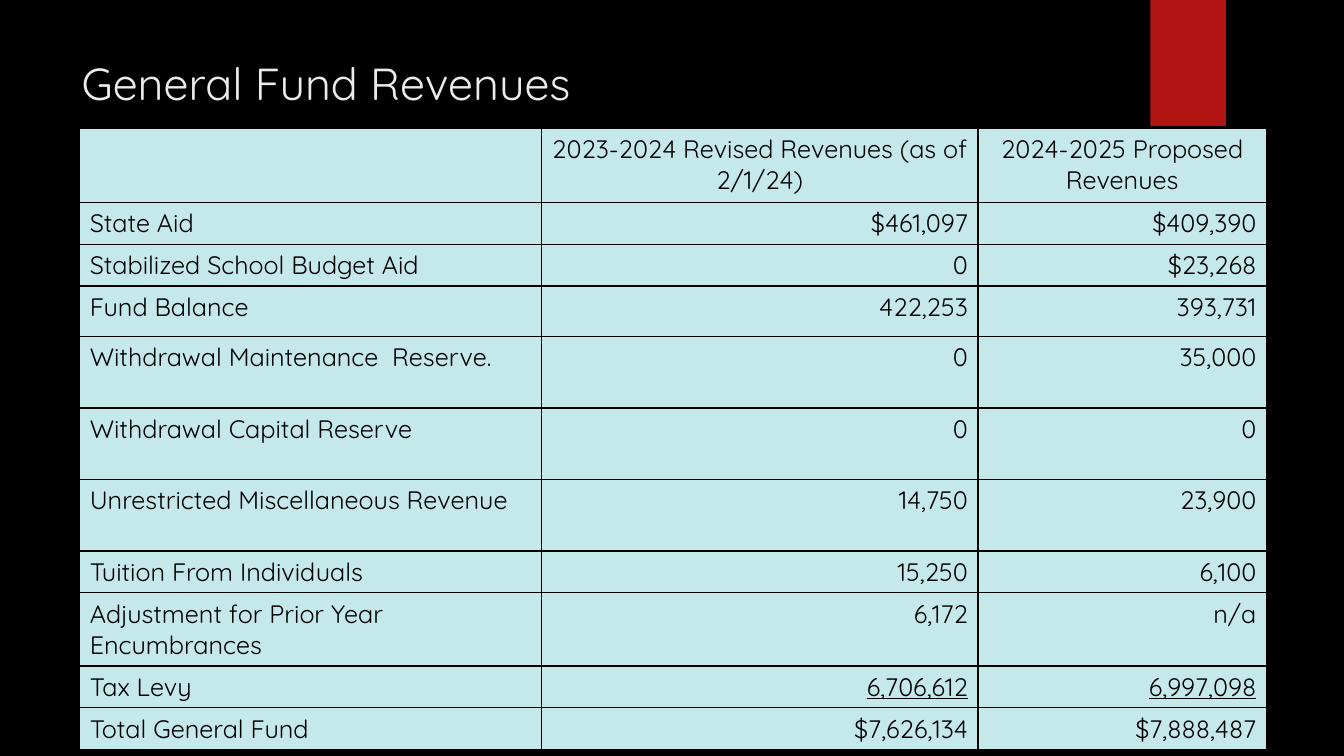
from lxml.etree import SubElement
from pptx import Presentation
from pptx.dml.color import RGBColor
from pptx.enum.shapes import MSO_SHAPE
from pptx.enum.text import MSO_ANCHOR, PP_ALIGN
from pptx.oxml.ns import qn
from pptx.util import Inches, Pt

FONT = "Quicksand"
BLACK, WHITE, RED, AQUA = "000000", "EBEBEB", "B01513", "C5E8EA"
TITLE = "General Fund Revenues"
REVENUES = [  # row height, label, revised, proposed
    (0.74, "", "2023-2024 Revised Revenues (as of 2/1/24)", "2024-2025 Proposed Revenues"),
    (0.41, "State Aid", "$461,097", "$409,390"),
    (0.41, "Stabilized School Budget Aid", "0", "$23,268"),
    (0.5, "Fund Balance", "422,253", "393,731"),
    (0.71, "Withdrawal Maintenance  Reserve.", "0", "35,000"),
    (0.71, "Withdrawal Capital Reserve", "0", "0"),
    (0.71, "Unrestricted Miscellaneous Revenue", "14,750", "23,900"),
    (0.41, "Tuition From Individuals", "15,250", "6,100"),
    (0.72, "Adjustment for Prior Year Encumbrances", "6,172", "n/a"),
    (0.41, "Tax Levy", "6,706,612", "6,997,098"),
    (0.41, "Total General Fund", "$7,626,134", "$7,888,487"),
]
COLUMNS = (4.58, 4.33, 2.86)
LEFT, TOP = 0.79, 1.27


def rgb(value):
    return RGBColor.from_string(value)


def write(tf, text, size=18, color=BLACK, align=PP_ALIGN.LEFT, underline=None):
    p = tf.paragraphs[0]
    p.alignment = align
    if not text:
        return
    r = p.add_run()
    r.text = text
    r.font.name, r.font.size, r.font.underline = FONT, Pt(size), underline
    r.font.color.rgb = rgb(color)


def add_borders(cell, color=BLACK, width=1):
    tc_pr = cell._tc.get_or_add_tcPr()
    for side in ("a:lnL", "a:lnR", "a:lnT", "a:lnB"):
        ln = SubElement(tc_pr, qn(side), w=str(Pt(width)))
        SubElement(SubElement(ln, qn("a:solidFill")), qn("a:srgbClr"), val=color)


def add_revenue_table(s):
    heights = [row[0] for row in REVENUES]
    table = s.shapes.add_table(len(REVENUES), len(COLUMNS), Inches(LEFT), Inches(TOP),
                               Inches(sum(COLUMNS)), Inches(sum(heights))).table
    table.first_row = table.horz_banding = False
    for column, width in zip(table.columns, COLUMNS):
        column.width = Inches(width)
    for i, (height, *texts) in enumerate(REVENUES):
        table.rows[i].height = Inches(height)
        for j, text in enumerate(texts):
            cell = table.cell(i, j)
            add_borders(cell)
            cell.fill.solid()
            cell.fill.fore_color.rgb = rgb(AQUA)
            align = PP_ALIGN.CENTER if i == 0 else PP_ALIGN.RIGHT if j else PP_ALIGN.LEFT
            underline = True if j and texts[0] == "Tax Levy" else None
            write(cell.text_frame, text, align=align, underline=underline)


def main():
    prs = Presentation()
    prs.slide_width, prs.slide_height = Inches(13.33), Inches(7.5)
    s = prs.slides.add_slide(prs.slide_layouts[5])
    s.background.fill.solid()
    s.background.fill.fore_color.rgb = rgb(BLACK)

    ribbon = s.shapes.add_shape(MSO_SHAPE.RECTANGLE, Inches(11.41), 0, Inches(0.75), Inches(1.25))
    ribbon.shadow.inherit = False
    ribbon.fill.solid()
    ribbon.fill.fore_color.rgb = rgb(RED)
    ribbon.line.fill.background()

    title = s.shapes.title
    title.left, title.top = Inches(0.71), Inches(0.5)
    title.width, title.height = Inches(10.29), Inches(1.53)
    title.text_frame.vertical_anchor = MSO_ANCHOR.TOP
    write(title.text_frame, TITLE, size=32, color=WHITE)

    add_revenue_table(s)
    prs.save("out.pptx")


if __name__ == "__main__":
    main()
